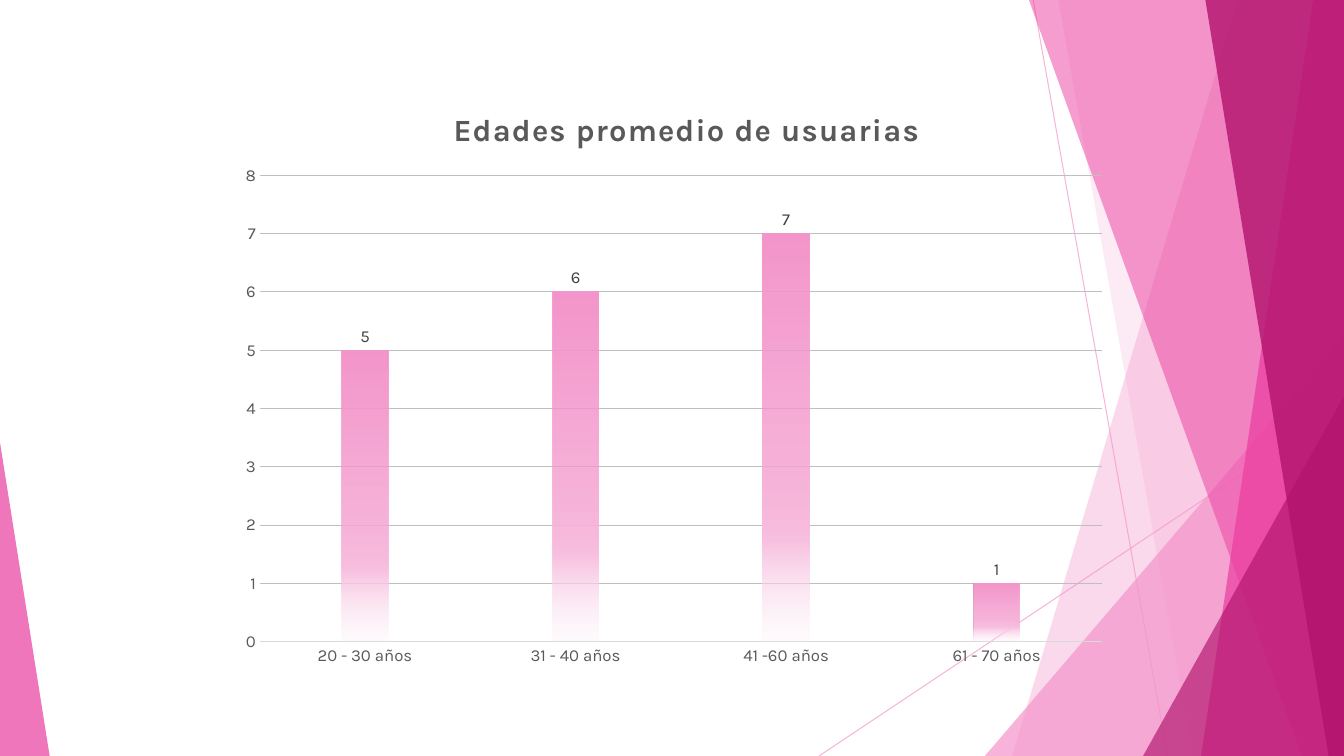
from lxml import etree
from pptx import Presentation
from pptx.chart.data import CategoryChartData
from pptx.dml.color import RGBColor
from pptx.enum.chart import XL_CHART_TYPE, XL_LABEL_POSITION, XL_TICK_MARK
from pptx.enum.shapes import MSO_CONNECTOR, MSO_SHAPE
from pptx.oxml import parse_xml
from pptx.oxml.ns import nsdecls, qn
from pptx.util import Pt

COLUMN_CLUSTERED = XL_CHART_TYPE.COLUMN_CLUSTERED
OUTSIDE_END = XL_LABEL_POSITION.OUTSIDE_END
NO_TICKS = XL_TICK_MARK.NONE
STRAIGHT = MSO_CONNECTOR.STRAIGHT
TRIANGLE = MSO_SHAPE.ISOSCELES_TRIANGLE

THEME = {
    "font": "Karla",
    "light": "F496CB", "pink": "EB3D9F", "dark": "B2136D",
    "text": "595959", "label": "404040", "axis": "D9D9D9", "grid": "BFBFBF",
    "title_size": 22, "text_size": 12, "line_width": 0.75,
}
WIDTH, HEIGHT = 960, 540


def set_alpha(fill_parent, percent):
    color = fill_parent.find(".//" + qn("a:srgbClr"))
    etree.SubElement(color, qn("a:alpha")).set("val", str(percent * 1000))


def style_font(font, size, color, bold=False):
    font.name = THEME["font"]
    font.size = Pt(size)
    font.bold = bold
    font.color.rgb = RGBColor.from_string(color)


presentation = Presentation()
presentation.slide_width, presentation.slide_height = Pt(WIDTH), Pt(HEIGHT)
slide = presentation.slides.add_slide(presentation.slide_layouts[6])
shapes = slide.shapes

# Thin crossing lines
for x1, y1, x2, y2 in [(738, 0, 834, HEIGHT), (WIDTH, 290, 585, HEIGHT)]:
    connector = shapes.add_connector(STRAIGHT, Pt(x1), Pt(y1), Pt(x2), Pt(y2))
    connector.line.color.rgb = RGBColor.from_string(THEME["light"])
    connector.line.width = Pt(THEME["line_width"])
    properties = connector._element.spPr
    set_alpha(properties, 70)
    etree.SubElement(properties, qn("a:effectLst"))

# Translucent facets, back to front:
# a band gives its top and bottom x on the left edge and runs to the right side,
# a triangle gives left, top, width and the place of its apex
facets = [
    ("band", (884, 723), "light", 36),
    ("band", (756, 852), "light", 20),
    ("triangle", (703.5, 240, 256.5, 1), "light", 72),
    ("band", (735, 930), "pink", 50),
    ("band", (938, 858), "pink", 70),
    ("band", (861, 949), "dark", 80),
    ("triangle", (816.5, 283, 143.5, 1), "dark", 66),
    ("triangle", (0, 316, 35.5, 0), "pink", 70),
]
for kind, geometry, color, alpha in facets:
    if kind == "band":
        top_x, bottom_x = geometry
        builder = shapes.build_freeform(Pt(top_x), 0)
        corners = [(WIDTH, 0), (WIDTH, HEIGHT), (bottom_x, HEIGHT)]
        builder.add_line_segments([(Pt(x), Pt(y)) for x, y in corners])
        facet = builder.convert_to_shape()
    else:
        left, top, width, apex = geometry
        facet = shapes.add_shape(
            TRIANGLE, Pt(left), Pt(top), Pt(width), Pt(HEIGHT - top))
        facet.adjustments[0] = apex
    facet.shadow.inherit = False
    facet.line.fill.background()
    facet.fill.solid()
    facet.fill.fore_color.rgb = RGBColor.from_string(THEME[color])
    set_alpha(facet._element.spPr, alpha)

# Column chart
chart_data = CategoryChartData()
chart_data.categories = ["20 - 30 años", "31 - 40 años", "41 -60 años", "61 - 70 años"]
chart_data.add_series("Series 1", (5, 6, 7, 1))
chart = shapes.add_chart(
    COLUMN_CLUSTERED, Pt(160), Pt(57), Pt(640), Pt(427), chart_data).chart
style_font(chart.font, THEME["text_size"], THEME["text"])
chart.has_legend = False

# Chart title
chart.has_title = True
title_frame = chart.chart_title.text_frame
title_frame.text = "Edades promedio de usuarias"
title_run = title_frame.paragraphs[0].runs[0]
style_font(title_run.font, THEME["title_size"], THEME["text"], True)
title_run.font._element.set("spc", "100")
chart.chart_title.include_in_layout = False

# Axes
value_axis, category_axis = chart.value_axis, chart.category_axis
for axis in (value_axis, category_axis):
    axis.major_tick_mark = axis.minor_tick_mark = NO_TICKS
    style_font(axis.tick_labels.font, THEME["text_size"], THEME["text"])
value_axis.minimum_scale, value_axis.maximum_scale = 0, 8
value_axis.major_unit = 1
value_axis.format.line.fill.background()
for line, color in [(value_axis.major_gridlines.format.line, "grid"),
                    (category_axis.format.line, "axis")]:
    line.color.rgb = RGBColor.from_string(THEME[color])
    line.width = Pt(THEME["line_width"])

# Columns fading towards the base
plot = chart.plots[0]
plot.gap_width, plot.overlap = 355, -70
plot.vary_by_categories = False
series = plot.series[0]
series.invert_if_negative = False
stops = [(0, "F496CB", 100), (51, "F496CB", 75), (75, "F8C0E0", 100), (100, "FDEAF5", 15)]
stop_xml = "".join(
    f'<a:gs pos="{position * 1000}"><a:srgbClr val="{color}">'
    f'<a:alpha val="{alpha * 1000}"/></a:srgbClr></a:gs>'
    for position, color, alpha in stops)
series.format.fill.solid()
solid_fill = series._element.find(qn("c:spPr")).find(qn("a:solidFill"))
solid_fill.getparent().replace(solid_fill, parse_xml(
    f'<a:gradFill {nsdecls("a")}><a:gsLst>{stop_xml}</a:gsLst>'
    '<a:lin ang="5400000" scaled="0"/></a:gradFill>'))

# Value labels
plot.has_data_labels = True
labels = plot.data_labels
labels.show_value = True
labels.position = OUTSIDE_END
style_font(labels.font, THEME["text_size"], THEME["label"])

# Fixed places of title and plot area, as fractions of the chart
plot_area = chart._chartSpace.chart.plotArea
title_element = chart.chart_title._element
layouts = [
    (title_element, "", {"x": 0.25, "y": 0.04}),
    (plot_area, '<c:layoutTarget val="inner"/>',
     {"x": 0.04, "y": 0.16, "w": 0.94, "h": 0.78}),
]
for element, target, place in layouts:
    for old_layout in element.findall(qn("c:layout")):
        element.remove(old_layout)
    modes = "".join(f'<c:{key}Mode val="edge"/>' for key in "xy")
    sizes = "".join(f'<c:{key} val="{value}"/>' for key, value in place.items())
    layout = parse_xml(
        f'<c:layout {nsdecls("c")}><c:manualLayout>{target}{modes}{sizes}'
        '</c:manualLayout></c:layout>')
    element.insert(1 if element is title_element else 0, layout)

presentation.save("out.pptx")
